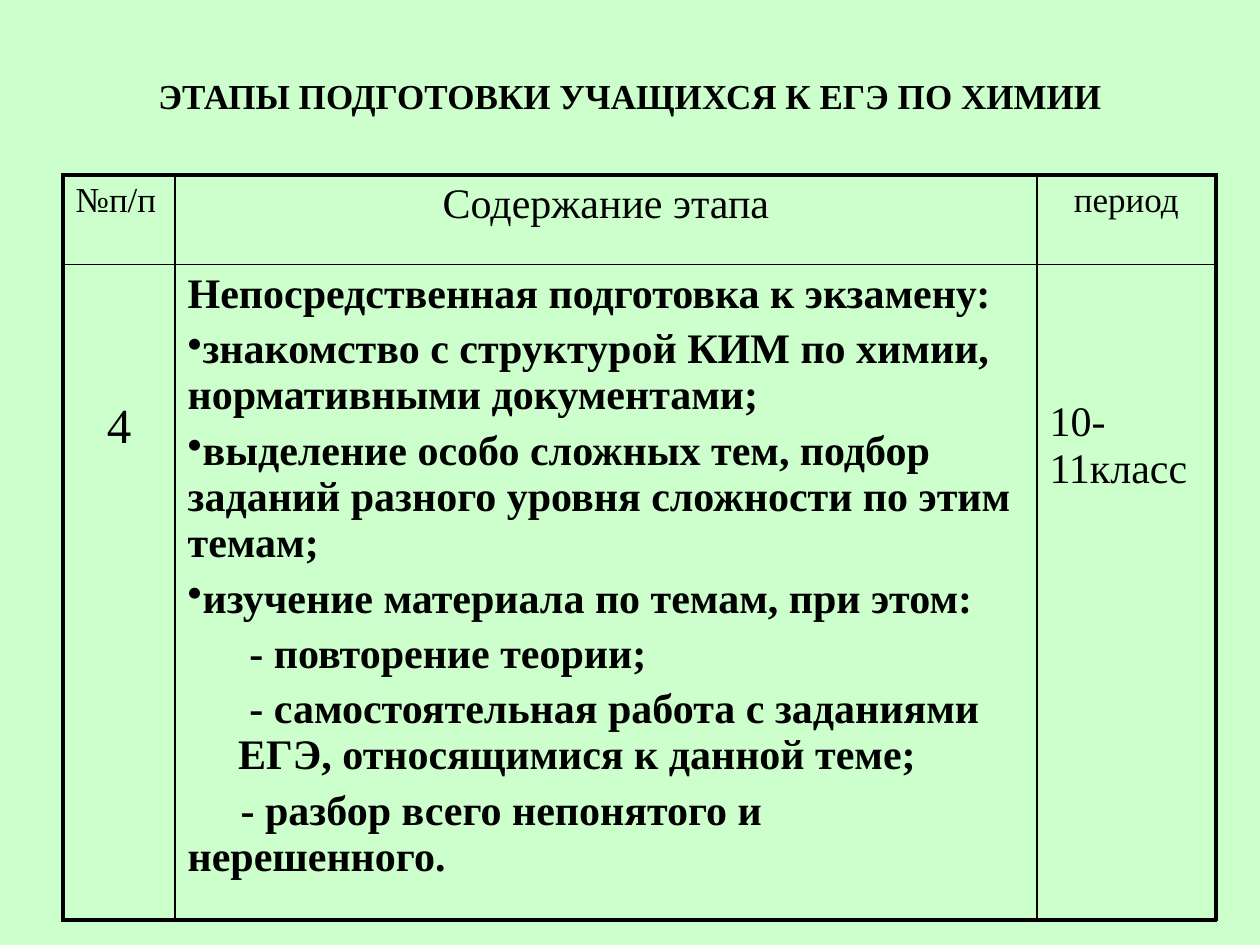
"""Build a slide with a table describing a stage of chemistry exam preparation."""
from dataclasses import dataclass

import pptx
import pptx.dml.color
import pptx.enum.text
import pptx.oxml
import pptx.oxml.ns
import pptx.util

Inches = pptx.util.Inches
Pt = pptx.util.Pt
Color = pptx.dml.color.RGBColor.from_string
Align = pptx.enum.text.PP_ALIGN


@dataclass(frozen=True)
class Theme:
    font: str = "Times New Roman"
    ink: str = "000000"
    background: str = "CDFFCD"
    small: int = 20
    body: int = 24
    large: int = 28
    gap: int = 5
    outer_line: float = 2.25
    inner_line: float = 1


THEME = Theme()
TITLE = "ЭТАПЫ ПОДГОТОВКИ УЧАЩИХСЯ К ЕГЭ ПО ХИМИИ"
COLUMNS = (0.89, 6.84, 1.42)
ROWS = (0.71, 5.2)
TABLE_LEFT, TABLE_TOP = 0.5, 1.39
LOWERED = 1.07

PLAIN = {"left": 0, "first": 0, "bullet": False}
BULLET = {"left": 0, "first": 0, "bullet": True}
SUBITEM = {"left": 0.4, "first": 0.09, "bullet": False}
CLOSING = {"left": 0, "first": 0.42, "bullet": False}

STAGE = [
    ("Непосредственная подготовка к экзамену:", PLAIN),
    ("знакомство с структурой КИМ по химии, нормативными документами;", BULLET),
    ("выделение особо сложных тем, подбор заданий разного уровня сложности по этим темам;", BULLET),
    ("изучение материала по темам, при этом:", BULLET),
    ("- повторение теории;", SUBITEM),
    ("- самостоятельная работа с заданиями ЕГЭ, относящимися к данной теме;", SUBITEM),
    ("- разбор всего непонятого и нерешенного.", CLOSING),
]
CELLS = [
    [
        {"lines": [("№п/п", PLAIN)], "size": THEME.small},
        {"lines": [("Содержание этапа", PLAIN)], "size": THEME.body, "align": Align.CENTER},
        {"lines": [("период", PLAIN)], "size": THEME.small, "align": Align.CENTER},
    ],
    [
        {"lines": [("4", PLAIN)], "size": THEME.large, "align": Align.CENTER, "top": LOWERED},
        {"lines": STAGE, "size": THEME.body, "bold": True},
        {"lines": [("10-11класс", PLAIN)], "size": THEME.body, "top": LOWERED},
    ],
]


def add_text(paragraph, text, size, bold=False, align=Align.LEFT):
    paragraph.alignment = align
    run = paragraph.add_run()
    run.text = text
    run.font.name = THEME.font
    run.font.size = Pt(size)
    run.font.bold = bold
    run.font.color.rgb = Color(THEME.ink)


def set_indent(paragraph, style):
    properties = paragraph._p.get_or_add_pPr()
    properties.set("marL", str(Inches(style["left"])))
    properties.set("indent", str(Inches(style["first"])))
    if style["bullet"]:
        properties.append(pptx.oxml.parse_xml(
            f'<a:buChar {pptx.oxml.ns.nsdecls("a")} char="•"/>'))


def set_borders(cell, row, column):
    outer_sides = {
        "L": column == 0,
        "R": column == len(COLUMNS) - 1,
        "T": row == 0,
        "B": row == len(ROWS) - 1,
    }
    properties = cell._tc.get_or_add_tcPr()
    for position, (side, outer) in enumerate(outer_sides.items()):
        width = Pt(THEME.outer_line if outer else THEME.inner_line)
        properties.insert(position, pptx.oxml.parse_xml(
            f'<a:ln{side} {pptx.oxml.ns.nsdecls("a")} w="{width}"><a:solidFill>'
            f'<a:srgbClr val="{THEME.ink}"/></a:solidFill></a:ln{side}>'))


def fill_cell(cell, content):
    cell.fill.background()
    cell.margin_top = Inches(content.get("top", 0.05))
    for index, (text, style) in enumerate(content["lines"]):
        frame = cell.text_frame
        paragraph = frame.add_paragraph() if index else frame.paragraphs[0]
        set_indent(paragraph, style)
        if index:
            paragraph.space_before = Pt(THEME.gap)
        add_text(paragraph, text, content["size"], content.get("bold", False),
                 content.get("align", Align.LEFT))


def add_title(slide):
    title = slide.shapes.title
    title.left, title.top = Inches(0.5), Inches(0.13)
    title.width, title.height = Inches(9), Inches(1.25)
    title.text_frame.vertical_anchor = pptx.enum.text.MSO_ANCHOR.MIDDLE
    add_text(title.text_frame.paragraphs[0], TITLE, THEME.small, True, Align.CENTER)


def add_stage_table(slide):
    table = slide.shapes.add_table(
        len(ROWS), len(COLUMNS), Inches(TABLE_LEFT), Inches(TABLE_TOP),
        Inches(sum(COLUMNS)), Inches(sum(ROWS))).table
    table.first_row = False
    table.horz_banding = False
    for column, width in zip(table.columns, COLUMNS):
        column.width = Inches(width)
    for row, height in zip(table.rows, ROWS):
        row.height = Inches(height)
    for row, contents in enumerate(CELLS):
        for column, content in enumerate(contents):
            cell = table.cell(row, column)
            fill_cell(cell, content)
            set_borders(cell, row, column)


def main():
    presentation = pptx.Presentation()
    presentation.slide_width = Inches(10)
    presentation.slide_height = Inches(7.5)
    slide = presentation.slides.add_slide(presentation.slide_layouts[5])
    slide.background.fill.solid()
    slide.background.fill.fore_color.rgb = Color(THEME.background)
    add_title(slide)
    add_stage_table(slide)
    presentation.save("out.pptx")


if __name__ == "__main__":
    main()
